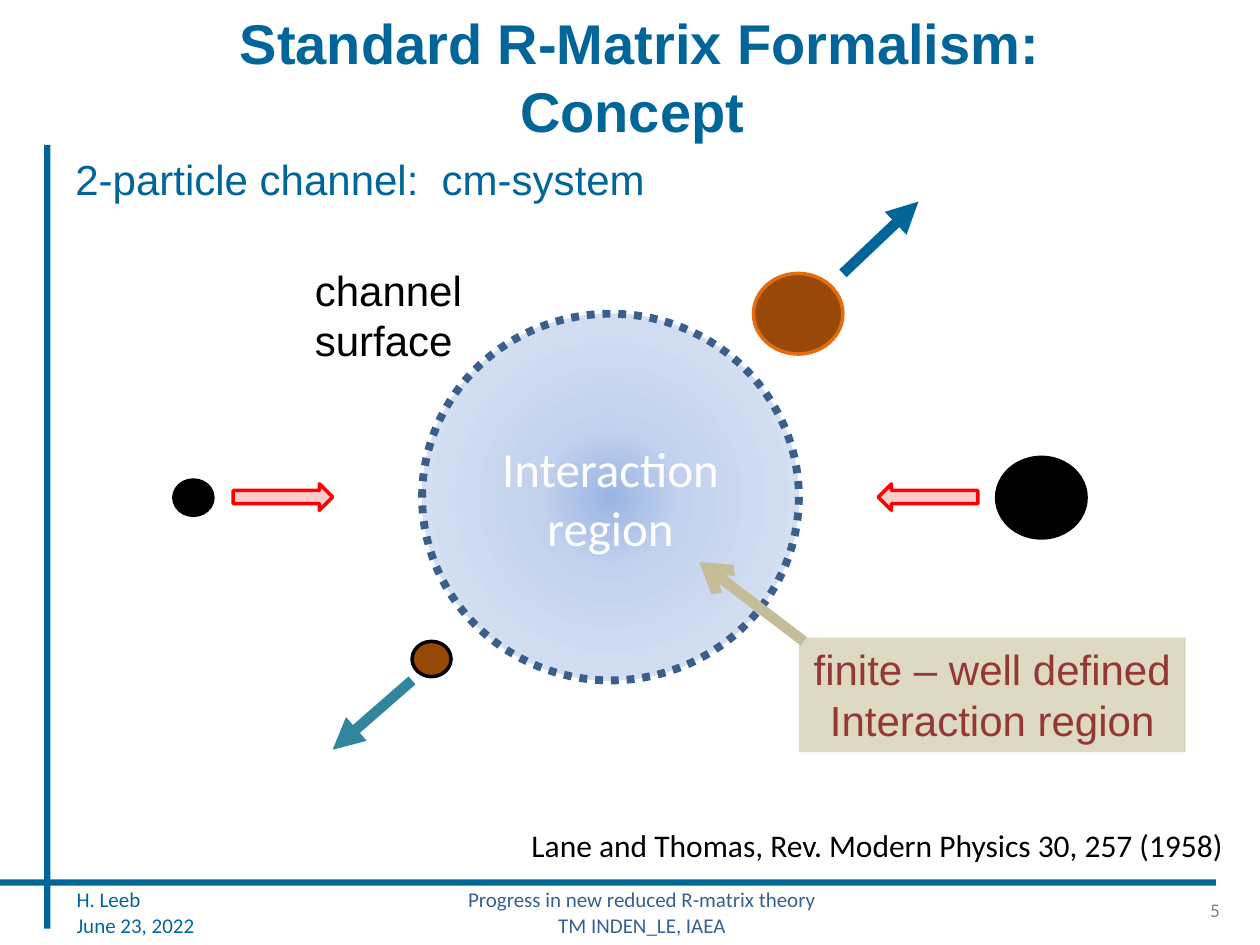
import lxml.etree
import pptx
import pptx.dml.color
import pptx.enum.dml
import pptx.enum.shapes
import pptx.enum.text
import pptx.oxml
import pptx.oxml.ns
import pptx.util

COLORS = {
    "blue": "006699", "footer": "376092", "gray": "808080", "black": "000000",
    "white": "FFFFFF", "brown": "984807", "orange": "E46C0A", "red": "FF0000",
    "pink": "FFCCCC", "teal": "31859C", "tan": "C4BD97", "sand": "DDD9C3",
    "wine": "953735", "ring": "3A5F8C",
    "core": "9AB5E4", "middle": "C2D1ED", "rim": "E1E8F5",
}
SHAPE = pptx.enum.shapes.MSO_SHAPE
ALIGN = pptx.enum.text.PP_ALIGN
ANCHOR = pptx.enum.text.MSO_ANCHOR
NAMESPACE = pptx.oxml.ns.nsdecls("a")


def color(name):
    return pptx.dml.color.RGBColor.from_string(COLORS[name])


class SlideBuilder:
    """Draws on a grid of 10 columns by 7.5 rows."""

    def __init__(self, presentation):
        self.column = presentation.slide_width / 10
        self.row = presentation.slide_height / 7.5
        self.slide = presentation.slides.add_slide(presentation.slide_layouts[5])

    def place(self, left, top, width, height):
        return (round(left * self.column), round(top * self.row),
                round(width * self.column), round(height * self.row))

    def set_text(self, shape, lines, size, ink, font="Arial", align=ALIGN.LEFT,
                 anchor=ANCHOR.TOP, bold=False, wrap=True):
        frame = shape.text_frame
        frame.text = lines
        frame.word_wrap = wrap
        frame.vertical_anchor = anchor
        for paragraph in frame.paragraphs:
            paragraph.alignment = align
            paragraph.font.name = font
            paragraph.font.size = pptx.util.Pt(size)
            paragraph.font.bold = bold
            paragraph.font.color.rgb = color(ink)

    def title(self, box, lines, size, ink):
        title = self.slide.shapes.title
        title.left, title.top, title.width, title.height = self.place(*box)
        self.set_text(title, lines, size, ink, align=ALIGN.CENTER,
                      anchor=ANCHOR.MIDDLE, bold=True)
        title.text_frame.auto_size = pptx.enum.text.MSO_AUTO_SIZE.NONE

    def text(self, box, lines, size, ink, **style):
        self.set_text(self.slide.shapes.add_textbox(*self.place(*box)),
                      lines, size, ink, **style)

    def shape(self, kind, box, fill, line=None, weight=2):
        shape = self.slide.shapes.add_shape(kind, *self.place(*box))
        shape.shadow.inherit = False
        shape.fill.solid()
        shape.fill.fore_color.rgb = color(fill)
        if line:
            shape.line.color.rgb = color(line)
            shape.line.width = pptx.util.Pt(weight)
        else:
            shape.line.fill.background()
        return shape

    def radial_fill(self, shape, stops):
        shape.fill.gradient()
        gradient = shape.element.spPr.find(pptx.oxml.ns.qn("a:gradFill"))
        stop_xml = "".join(
            f'<a:gs pos="{share * 1000}"><a:srgbClr val="{COLORS[name]}"/></a:gs>'
            for share, name in stops)
        gradient.getparent().replace(gradient, pptx.oxml.parse_xml(
            f'<a:gradFill {NAMESPACE} rotWithShape="1"><a:gsLst>{stop_xml}</a:gsLst>'
            '<a:path path="circle"><a:fillToRect l="50000" t="50000" '
            'r="50000" b="50000"/></a:path></a:gradFill>'))

    def arrow(self, start, end, ink, head="triangle"):
        connector = self.slide.shapes.add_connector(
            pptx.enum.shapes.MSO_CONNECTOR.STRAIGHT, *self.place(*start, *end))
        connector.line.color.rgb = color(ink)
        connector.line.width = pptx.util.Pt(6)
        line = connector.element.spPr.find(pptx.oxml.ns.qn("a:ln"))
        lxml.etree.SubElement(line, pptx.oxml.ns.qn("a:tailEnd"), type=head)
        lxml.etree.SubElement(connector.element.spPr, pptx.oxml.ns.qn("a:effectLst"))


def main():
    presentation = pptx.Presentation()
    presentation.slide_width = pptx.util.Inches(10)
    presentation.slide_height = pptx.util.Inches(7.5)
    builder = SlideBuilder(presentation)

    # Frame bars and title
    builder.shape(SHAPE.RECTANGLE, (0.35, 1.15, 0.05, 6.22), "blue")
    builder.shape(SHAPE.RECTANGLE, (0, 6.98, 9.65, 0.05), "blue")
    builder.title((1.22, 0.21, 7.72, 0.79),
                  "Standard R-Matrix Formalism:\vConcept ", 32, "blue")

    # Interaction region inside the channel surface
    region = builder.shape(SHAPE.OVAL, (3.35, 2.49, 2.99, 2.91), "core", "ring", 4.5)
    builder.radial_fill(region, [(0, "core"), (27, "middle"), (100, "rim")])
    region.line.dash_style = pptx.enum.dml.MSO_LINE.ROUND_DOT
    builder.set_text(region, "Interaction\nregion", 28, "white", font="Calibri",
                     align=ALIGN.CENTER, anchor=ANCHOR.MIDDLE)

    # Labels
    builder.text((0.5, 1.17, 4.77, 0.5), "2-particle channel:  cm-system",
                 24, "blue", wrap=False)
    builder.text((2.4, 2.05, 1.38, 0.91), "channel\nsurface", 24, "black", wrap=False)
    builder.text((4.12, 6.51, 5.76, 0.4),
                 "Lane and Thomas, Rev. Modern Physics 30, 257 (1958)",
                 18, "black", font="Calibri", wrap=False)

    # Incoming and outgoing particles
    large, small = (0.71, 0.64), (0.31, 0.28)
    for left, top, size, fill, line in [
        (7.91, 3.63, large, "black", "black"),
        (1.38, 3.81, small, "black", "black"),
        (5.98, 2.17, large, "brown", "orange"),
        (3.27, 5.09, small, "brown", "black"),
    ]:
        builder.shape(SHAPE.OVAL, (left, top, *size), fill, line)

    # Directions of motion
    for kind, left in [(SHAPE.RIGHT_ARROW, 1.85), (SHAPE.LEFT_ARROW, 6.97)]:
        builder.shape(kind, (left, 3.84, 0.79, 0.21), "pink", "red")
    builder.arrow((3.27, 5.4), (2.64, 5.95), "teal")
    builder.arrow((6.69, 2.17), (7.29, 1.6), "blue")

    # Callout
    callout = builder.shape(SHAPE.RECTANGLE, (6.34, 5.06, 3.07, 0.91), "sand")
    builder.set_text(callout, "finite – well defined\nInteraction region", 24, "wine",
                     align=ALIGN.CENTER, wrap=False)
    builder.arrow((6.38, 5.09), (5.55, 4.46), "tan", head="arrow")

    # Footer
    for box, lines, size, ink, align in [
        ((0.51, 7.04, 1.97, 0.4), "H. Leeb\nJune 23, 2022", 12, "blue", ALIGN.LEFT),
        ((2.27, 6.99, 5.65, 0.5),
         "Progress in new reduced R-matrix theory\nTM INDEN_LE, IAEA",
         12, "footer", ALIGN.CENTER),
        ((9.34, 7.02, 0.44, 0.4), "5", 11, "gray", ALIGN.RIGHT),
    ]:
        builder.text(box, lines, size, ink, font="Calibri", align=align,
                     anchor=ANCHOR.MIDDLE)

    presentation.save("out.pptx")


if __name__ == "__main__":
    main()
